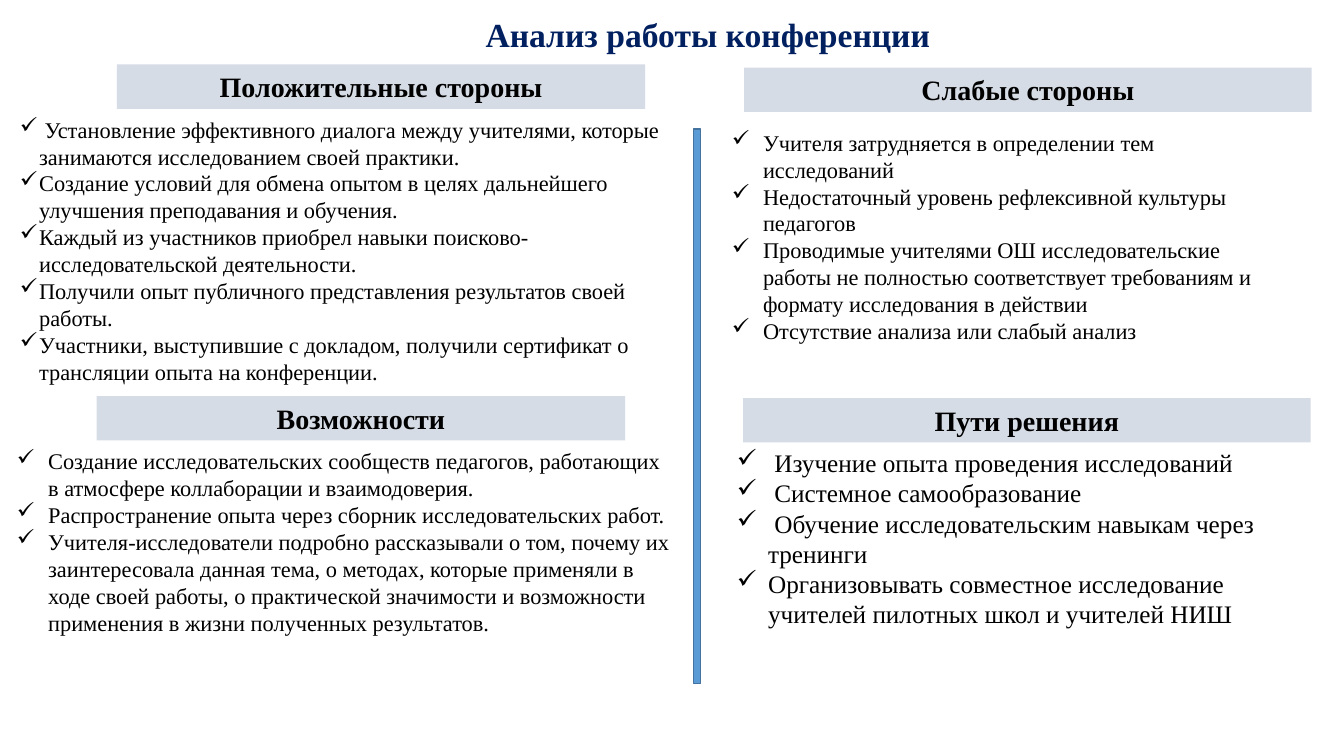
"""Builds the conference analysis slide with four titled bullet blocks."""
import dataclasses
import typing

import lxml.etree
import pptx
import pptx.dml.color
import pptx.enum.shapes
import pptx.enum.text
import pptx.oxml.ns
import pptx.util

Inches = pptx.util.Inches
Align = pptx.enum.text.PP_ALIGN
Anchor = pptx.enum.text.MSO_ANCHOR


@dataclasses.dataclass(frozen=True)
class Theme:
    font: str = "Times New Roman"
    title: str = "002060"
    text: str = "000000"
    band: str = "D6DCE5"
    divider: str = "5B9BD5"
    divider_edge: str = "43739E"
    title_size: int = 24
    heading_size: int = 20
    body_size: int = 16
    solution_size: int = 18


class Box(typing.NamedTuple):
    left: float
    top: float
    width: float
    height: float


@dataclasses.dataclass(frozen=True)
class Block:
    heading: str
    heading_box: Box
    points_box: Box
    points: tuple[str, ...]
    size: int
    indent: float = 0.31


THEME = Theme()
TITLE_BOX = Box(4.69, 0.09, 4.66, 0.5)
DIVIDER_BOX = Box(6.88, 1.28, 0.07, 5.5)
BLOCKS = (
    Block("Положительные стороны", Box(1.16, 0.64, 5.24, 0.44), Box(0.1, 1.1, 6.64, 2.79), (
        " Установление эффективного диалога между учителями, которые занимаются исследованием своей практики.",
        "Создание условий для обмена опытом в целях дальнейшего улучшения преподавания и обучения.",
        "Каждый из участников приобрел навыки поисково-исследовательской деятельности.",
        "Получили опыт публичного представления результатов своей работы.",
        "Участники, выступившие с докладом, получили сертификат о трансляции опыта на конференции.",
    ), THEME.body_size, 0.19),
    Block("Слабые стороны", Box(7.38, 0.67, 5.63, 0.44), Box(7.16, 1.23, 5.67, 2.26), (
        "Учителя затрудняется в определении тем исследований",
        "Недостаточный уровень рефлексивной культуры педагогов",
        "Проводимые учителями ОШ исследовательские работы не полностью соответствует "
        "требованиям и формату исследования в действии",
        "Отсутствие анализа или слабый анализ",
    ), THEME.body_size),
    Block("Возможности", Box(0.96, 3.93, 5.24, 0.44), Box(0.07, 4.39, 6.67, 1.99), (
        "Создание исследовательских сообществ педагогов, работающих в атмосфере коллаборации и взаимодоверия.",
        "Распространение опыта через сборник исследовательских работ.",
        "Учителя-исследователи подробно рассказывали о том, почему их заинтересовала данная тема, "
        "о методах, которые применяли в ходе своей работы, о практической значимости и возможности "
        "применения в жизни полученных результатов.",
    ), THEME.body_size),
    Block("Пути решения", Box(7.37, 3.95, 5.63, 0.44), Box(7.21, 4.39, 5.95, 2.52), (
        " Изучение опыта проведения исследований",
        " Системное самообразование",
        " Обучение исследовательским навыкам через тренинги",
        "Организовывать совместное исследование учителей пилотных школ и учителей НИШ",
    ), THEME.solution_size),
)


def rgb(color: str) -> pptx.dml.color.RGBColor:
    """Return the colour object for a hex value."""
    return pptx.dml.color.RGBColor.from_string(color)


def place(box: Box) -> list[int]:
    """Return the box in slide units."""
    return [Inches(length) for length in box]


def apply(target: typing.Any, values: dict[str, typing.Any]) -> None:
    """Set each format value on the target."""
    for name, value in values.items():
        setattr(target, name, value)


def write(paragraph: typing.Any, text: str, size: int, color: str, bold: bool, align: Align) -> None:
    """Put formatted text into a paragraph."""
    paragraph.text = text
    paragraph.alignment = align
    apply(paragraph.font, {"name": THEME.font, "size": pptx.util.Pt(size), "bold": bold})
    paragraph.font.color.rgb = rgb(color)


def add_bullet(paragraph: typing.Any, indent: float) -> None:
    """Give a paragraph a hanging check mark."""
    properties = paragraph._p.get_or_add_pPr()
    properties.set("marL", str(Inches(indent)))
    properties.set("indent", str(-Inches(indent)))
    bullet = lxml.etree.SubElement(properties, pptx.oxml.ns.qn("a:buChar"))
    bullet.set("char", "✓")


def add_title(slide: typing.Any, text: str) -> None:
    """Place and format the slide title."""
    title = slide.shapes.title
    apply(title, dict(zip(("left", "top", "width", "height"), place(TITLE_BOX))))
    apply(title.text_frame, {"word_wrap": False, "vertical_anchor": Anchor.TOP})
    write(title.text_frame.paragraphs[0], text, THEME.title_size, THEME.title, True, Align.CENTER)


def add_bar(slide: typing.Any, box: Box, fill: str) -> typing.Any:
    """Draw a flat rectangle without an outline."""
    bar = slide.shapes.add_shape(pptx.enum.shapes.MSO_SHAPE.RECTANGLE, *place(box))
    bar.shadow.inherit = False
    bar.fill.solid()
    bar.fill.fore_color.rgb = rgb(fill)
    bar.line.fill.background()
    return bar


def add_divider(slide: typing.Any) -> None:
    """Draw the outlined bar between the columns."""
    divider = add_bar(slide, DIVIDER_BOX, THEME.divider)
    divider.line.color.rgb = rgb(THEME.divider_edge)
    divider.line.width = pptx.util.Pt(1)


def add_block(slide: typing.Any, block: Block) -> None:
    """Draw a heading band and its bullet points."""
    heading = add_bar(slide, block.heading_box, THEME.band).text_frame
    apply(heading, {"word_wrap": True, "vertical_anchor": Anchor.TOP})
    write(heading.paragraphs[0], block.heading, THEME.heading_size, THEME.text, True, Align.CENTER)
    frame = slide.shapes.add_textbox(*place(block.points_box)).text_frame
    frame.word_wrap = True
    for index, point in enumerate(block.points):
        paragraph = frame.add_paragraph() if index else frame.paragraphs[0]
        add_bullet(paragraph, block.indent)
        write(paragraph, point, block.size, THEME.text, False, Align.LEFT)


def main() -> None:
    """Build and save the slide."""
    presentation = pptx.Presentation()
    apply(presentation, {"slide_width": Inches(13.33), "slide_height": Inches(7.5)})
    slide = presentation.slides.add_slide(presentation.slide_layouts[5])
    add_title(slide, "Анализ работы конференции")
    add_divider(slide)
    for block in BLOCKS:
        add_block(slide, block)
    presentation.save("out.pptx")


if __name__ == "__main__":
    main()
